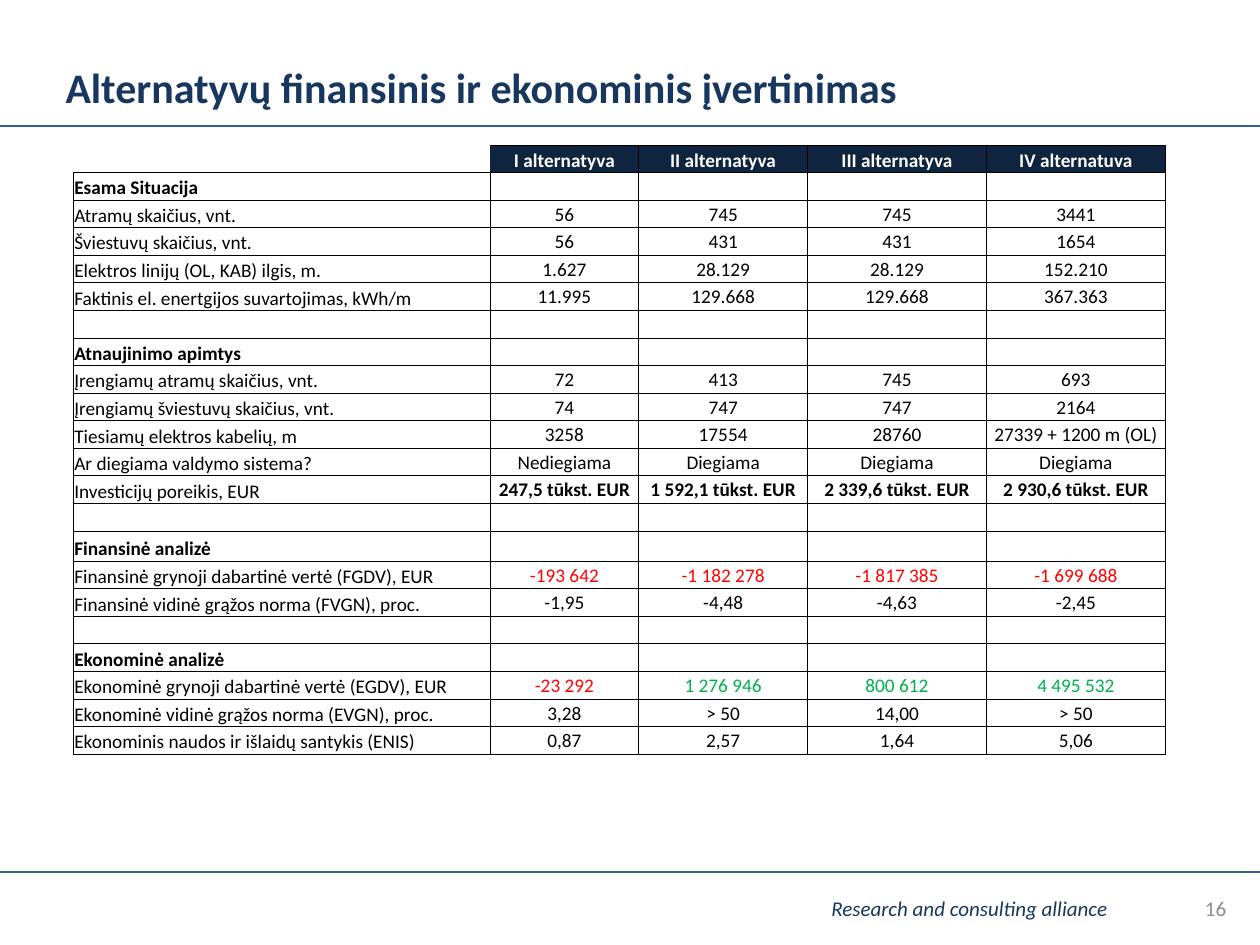
"""Build the slide comparing four alternatives in a financial and economic table."""
from lxml import etree
from pptx import Presentation
from pptx import util as u
from pptx.dml.color import RGBColor
from pptx.enum import shapes, text
from pptx.oxml import ns

theme = {
    "font": "Calibri", "navy": "17375E", "rule": "376092", "head": "0F243E",
    "white": "FFFFFF", "black": "000000", "grey": "8C8C8C",
    "red": "FF0000", "green": "00B050",
    "title": 24, "foot": 12, "cell": 11,
}
left, mid = text.PP_ALIGN.LEFT, text.PP_ALIGN.CENTER
right = text.PP_ALIGN.RIGHT
low, centre = text.MSO_ANCHOR.BOTTOM, text.MSO_ANCHOR.MIDDLE

rows = [
    ["", "I alternatyva", "II alternatyva", "III alternatyva", "IV alternatuva"],
    ["Esama Situacija"],
    ["Atramų skaičius, vnt.", "56", "745", "745", "3441"],
    ["Šviestuvų skaičius, vnt.", "56", "431", "431", "1654"],
    ["Elektros linijų (OL, KAB) ilgis, m.", "1.627", "28.129", "28.129", "152.210"],
    ["Faktinis el. enertgijos suvartojimas, kWh/m", "11.995", "129.668", "129.668", "367.363"],
    [],
    ["Atnaujinimo apimtys"],
    ["Įrengiamų atramų skaičius, vnt.", "72", "413", "745", "693"],
    ["Įrengiamų šviestuvų skaičius, vnt.", "74", "747", "747", "2164"],
    ["Tiesiamų elektros kabelių, m", "3258", "17554", "28760", "27339 + 1200 m (OL)"],
    ["Ar diegiama valdymo sistema?", "Nediegiama", "Diegiama", "Diegiama", "Diegiama"],
    ["Investicijų poreikis, EUR", "247,5 tūkst. EUR", "1 592,1 tūkst. EUR",
     "2 339,6 tūkst. EUR", "2 930,6 tūkst. EUR"],
    [],
    ["Finansinė analizė"],
    ["Finansinė grynoji dabartinė vertė (FGDV), EUR", "-193 642", "-1 182 278",
     "-1 817 385", "-1 699 688"],
    ["Finansinė vidinė grąžos norma (FVGN), proc.", "-1,95", "-4,48", "-4,63", "-2,45"],
    [],
    ["Ekonominė analizė"],
    ["Ekonominė grynoji dabartinė vertė (EGDV), EUR", "-23 292", "1 276 946",
     "800 612", "4 495 532"],
    ["Ekonominė vidinė grąžos norma (EVGN), proc.", "3,28", "> 50", "14,00", "> 50"],
    ["Ekonominis naudos ir išlaidų santykis (ENIS)", "0,87", "2,57", "1,64", "5,06"],
]


def write(frame, words, size, tint, align=left, **form):
    para = frame.paragraphs[0]
    para.alignment = align
    run = para.add_run()
    run.text = words
    run.font.color.rgb = RGBColor.from_string(theme[tint])
    form.update(name=theme["font"], size=u.Pt(theme[size]))
    for key, val in form.items():
        setattr(run.font, key, val)


def edge(cell, side, shown):
    line = etree.Element(ns.qn("a:ln" + side), w=str(u.Pt(0.5)))
    kind = "a:solidFill" if shown else "a:noFill"
    fill = etree.SubElement(line, ns.qn(kind))
    if shown:
        etree.SubElement(fill, ns.qn("a:srgbClr"), val=theme["black"])
    cell._tc.get_or_add_tcPr().insert("LRTB".index(side), line)


deck = Presentation()
deck.slide_width, deck.slide_height = u.Inches(10), u.Inches(7.5)
slide = deck.slides.add_slide(deck.slide_layouts[5])

for y in (1, 6.92):
    rule = slide.shapes.add_connector(
        shapes.MSO_CONNECTOR.STRAIGHT, 0, u.Inches(y), u.Inches(10), u.Inches(y))
    rule.line.color.rgb = RGBColor.from_string(theme["rule"])
    rule.line.width = u.Pt(1)
    etree.SubElement(rule._element.spPr, ns.qn("a:effectLst"))

name = slide.shapes.title
spot = {"left": 0.42, "top": 0.42, "width": 9, "height": 0.53}
for key, val in spot.items():
    setattr(name, key, u.Inches(val))
name.text_frame.vertical_anchor = centre
write(name.text_frame, "Alternatyvų finansinis ir ekonominis įvertinimas",
      "title", "navy", bold=True)

foots = [
    ((6.5, 7.06, 3.46, 0.29), "Research and consulting alliance", "navy", left, True),
    ((7.5, 7.01, 2.33, 0.4), "16", "grey", right, False),
]
for area, words, tint, align, slant in foots:
    frame = slide.shapes.add_textbox(*map(u.Inches, area)).text_frame
    frame.word_wrap = True
    frame.vertical_anchor = centre
    write(frame, words, "foot", tint, align, italic=slant)

wide = [3.31, 1.18, 1.34, 1.42, 1.42]
tall, extra = 4.84, 0.02
step = (tall - extra) / len(rows)
grid = slide.shapes.add_table(
    len(rows), len(wide), u.Inches(0.58), u.Inches(1.15),
    u.Inches(sum(wide)), u.Inches(tall)).table
grid.first_row = grid.horz_banding = False
for col, width in zip(grid.columns, wide):
    col.width = u.Inches(width)

for r, row in enumerate(rows):
    loose = row == ["Finansinė analizė"]
    grid.rows[r].height = u.Inches(step + extra * loose)
    for c in range(len(wide)):
        cell = grid.cell(r, c)
        words = row[c] if c < len(row) else ""
        head = r == 0 and c > 0
        if head:
            cell.fill.solid()
            cell.fill.fore_color.rgb = RGBColor.from_string(theme["head"])
        else:
            cell.fill.background()
        for side in "LRTB":
            bare = r == 0 and (c == 0 and side != "B" or c == 1 and side == "L")
            edge(cell, side, not bare)
        inset = u.Inches(0 if c and row[0:1] == ["Investicijų poreikis, EUR"] else 0.01)
        form = {"margin_left": inset, "margin_right": inset, "margin_top": inset,
                "margin_bottom": 0, "vertical_anchor": low if head or c == 0 else centre}
        for key, val in form.items():
            setattr(cell, key, val)
        if not words:
            end = cell.text_frame.paragraphs[0]._p.get_or_add_endParaRPr()
            end.set("sz", str(theme["cell"] * 100))
            continue
        tint = "white" if head else "black"
        if c and "GDV" in row[0]:
            tint = "red" if words.startswith("-") else "green"
        bold = head or len(row) == 1 or "tūkst." in words
        write(cell.text_frame, words, "cell", tint, mid if c else left, bold=bold)

deck.save("out.pptx")
